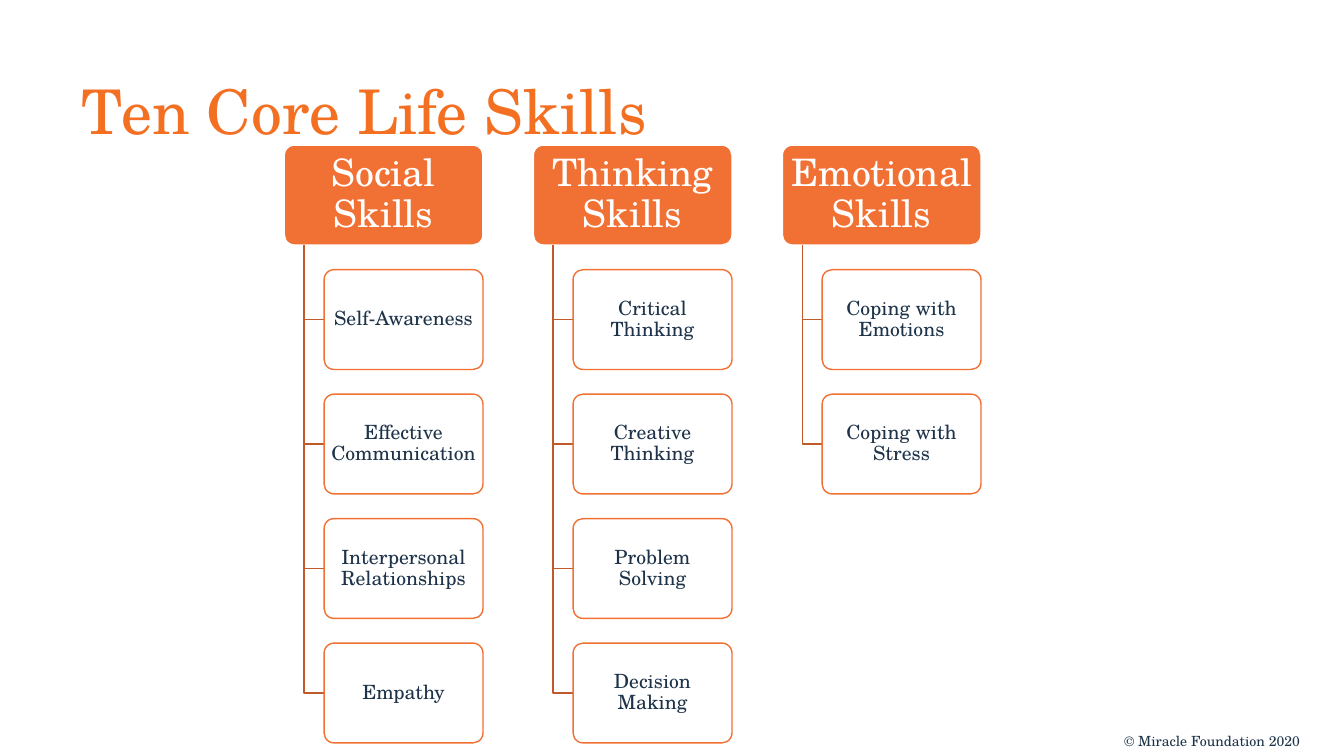
from lxml import etree
from pptx import Presentation
from pptx.dml.color import RGBColor
from pptx.enum.shapes import MSO_SHAPE
from pptx.enum.text import MSO_ANCHOR, MSO_AUTO_SIZE, PP_ALIGN
from pptx.oxml.ns import qn
from pptx.util import Inches, Pt

ROUNDED = MSO_SHAPE.ROUNDED_RECTANGLE
MIDDLE = MSO_ANCHOR.MIDDLE
TOP = MSO_ANCHOR.TOP
NO_FIT = MSO_AUTO_SIZE.NONE
CENTER = PP_ALIGN.CENTER
LEFT = PP_ALIGN.LEFT

SKILLS = {
    "Social Skills": [
        "Self-Awareness",
        "Effective Communication",
        "Interpersonal Relationships",
        "Empathy",
    ],
    "Thinking Skills": [
        "Critical Thinking",
        "Creative Thinking",
        "Problem Solving",
        "Decision Making",
    ],
    "Emotional Skills": ["Coping with Emotions", "Coping with Stress"],
}


def color(value):
    return RGBColor.from_string(value)


class SkillsSlide:
    FONT = "TeX Gyre Schola"
    TITLE_ORANGE = "F37023"
    ORANGE = "F17134"
    BRANCH = "C15A2A"
    WHITE = "FFFFFF"
    NAVY = "1E3349"

    GRID_LEFT, GRID_TOP = 2.82, 1.44
    COLUMN = 2.47
    ROW = COLUMN / 2
    HEADING_WIDTH, BOX_HEIGHT = 1.97, 0.99
    INDENT = HEADING_WIDTH / 5

    def __init__(self, deck):
        self.page = deck.slides.add_slide(deck.slide_layouts[5])

    def add_text(self, holder, text, size, ink, align, anchor, insets, spacing=0.9):
        frame = holder.text_frame
        frame.auto_size = NO_FIT
        frame.word_wrap = True
        frame.vertical_anchor = anchor
        frame.margin_left = frame.margin_right = Inches(insets[0])
        frame.margin_top = frame.margin_bottom = Inches(insets[1])
        para = frame.paragraphs[0]
        para.alignment = align
        para.line_spacing = spacing
        span = para.add_run()
        span.text = text
        span.font.name = self.FONT
        span.font.size = Pt(size)
        span.font.color.rgb = color(ink)

    def title(self, text):
        holder = self.page.shapes.title
        holder.left, holder.top = Inches(0.71), Inches(0.41)
        holder.width, holder.height = Inches(11.5), Inches(1.45)
        self.add_text(holder, text, 44, self.TITLE_ORANGE, LEFT, MIDDLE, (0.1, 0.05))

    def box(self, left, row, width, fill, line):
        top = self.GRID_TOP + row * self.ROW
        shape = self.page.shapes.add_shape(
            ROUNDED, Inches(left), Inches(top), Inches(width), Inches(self.BOX_HEIGHT)
        )
        shape.shadow.inherit = False
        shape.adjustments[0] = 0.1
        shape.fill.solid()
        shape.fill.fore_color.rgb = color(fill)
        shape.line.color.rgb = color(line)
        shape.line.width = Pt(1)
        return shape

    def heading(self, column, text):
        left = self.GRID_LEFT + column * self.COLUMN
        shape = self.box(left, 0, self.HEADING_WIDTH, self.ORANGE, self.WHITE)
        self.add_text(shape, text, 27, self.WHITE, CENTER, MIDDLE, (0.05, 0.04))

    def branch(self, column, row):
        end = self.GRID_LEFT + column * self.COLUMN + self.INDENT
        stem = end - self.INDENT / 2
        start = self.GRID_TOP + self.BOX_HEIGHT
        middle = self.GRID_TOP + row * self.ROW + self.BOX_HEIGHT / 2
        builder = self.page.shapes.build_freeform(Inches(stem), Inches(start))
        builder.add_line_segments(
            [(Inches(stem), Inches(middle)), (Inches(end), Inches(middle))], close=False
        )
        elbow = builder.convert_to_shape()
        elbow.shadow.inherit = False
        elbow.fill.background()
        elbow.line.color.rgb = color(self.BRANCH)
        elbow.line.width = Pt(1)

    def skill(self, column, row, text):
        left = self.GRID_LEFT + column * self.COLUMN + self.INDENT
        width = self.HEADING_WIDTH - self.INDENT
        shape = self.box(left, row, width, self.WHITE, self.ORANGE)
        tint = shape._element.spPr.find(qn("a:solidFill"))[0]
        etree.SubElement(tint, qn("a:alpha")).set("val", "90000")
        self.add_text(shape, text, 14, self.NAVY, CENTER, MIDDLE, (0.03, 0.02))

    def footer(self, text):
        holder = self.page.shapes.add_textbox(
            Inches(11.05), Inches(7.22), Inches(2.06), Inches(0.28)
        )
        self.add_text(holder, text, 10, "1D334A", LEFT, TOP, (0.1, 0.05), 1.0)


def main():
    deck = Presentation()
    deck.slide_width, deck.slide_height = Inches(13.33), Inches(7.5)
    slide = SkillsSlide(deck)
    slide.title("Ten Core Life Skills")
    for column, (heading, skills) in enumerate(SKILLS.items()):
        slide.heading(column, heading)
        for row, skill in enumerate(skills, 1):
            slide.branch(column, row)
            slide.skill(column, row, skill)
    slide.footer("© Miracle Foundation 2020")
    deck.save("out.pptx")


if __name__ == "__main__":
    main()
